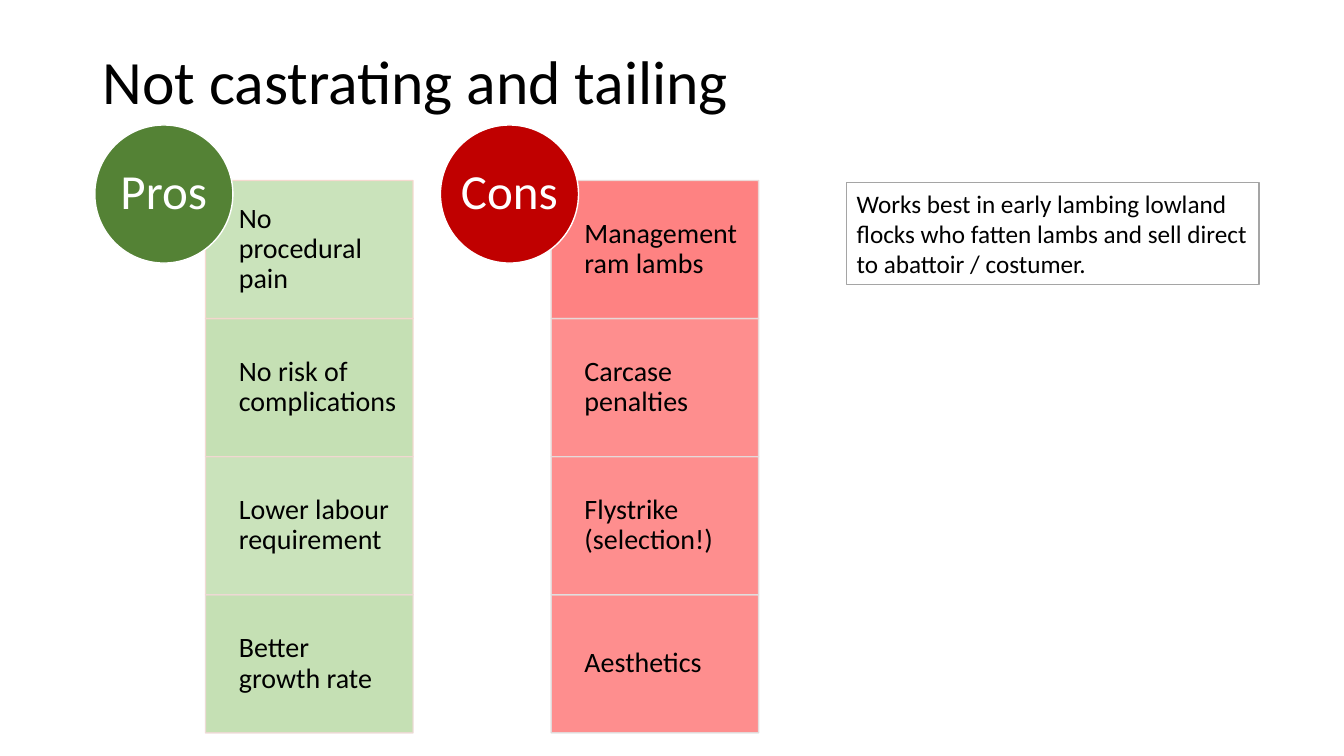
from lxml.etree import SubElement
from pptx import Presentation
from pptx.dml.color import RGBColor
from pptx.enum.shapes import MSO_SHAPE as Shape
from pptx.enum.text import MSO_ANCHOR as Anchor, PP_ALIGN as Align
from pptx.oxml.ns import qn
from pptx.util import Cm, Pt

CELL_W, CELL_H = 5.23, 3.48
TOP, LEFT, STEP = 4.55, 5.18, 8.71
DISC = 3.48
DISC_DX, DISC_TOP = 2.79, 3.15

# Heading, disc fill, cell fill, then (text, fill opacity, line colour) per cell
LISTS = [
    ("Pros", "548235", "C5E0B4", [
        ("No procedural pain", 90, "F8D7CE"),
        ("No risk of complications", 100, "F5D7D0"),
        ("Lower labour requirement", 90, "F2D8D3"),
        ("Better growth rate", 100, "EED9D5")]),
    ("Cons", "C00000", "FE8282", [
        ("Management ram lambs", 100, "EBDAD8"),
        ("Carcase penalties", 90, "E8DCDB"),
        ("Flystrike (selection!)", 90, "E4DEDE"),
        ("Aesthetics", 90, "E1E1E1")]),
]


def rgb(code):
    return RGBColor.from_string(code)


class Board:
    font = "Calibri"

    def __init__(self, deck):
        self.slide = deck.slides.add_slide(deck.slide_layouts[6])

    def label(self, shape, text, size, color="000000", align=Align.LEFT,
              pads=(0.25, 0.13, 0.25, 0.13), lead=0.9, wrap=True):
        """Set the text of a shape; pads are left, top, right, bottom in cm."""
        frame = shape.text_frame
        sides = ("margin_left", "margin_top", "margin_right", "margin_bottom")
        style = dict(zip(sides, map(Cm, pads)))
        style.update(word_wrap=wrap, vertical_anchor=Anchor.MIDDLE)
        for name, value in style.items():
            setattr(frame, name, value)
        para = frame.paragraphs[0]
        para.text, para.alignment, para.line_spacing = text, align, lead
        for name, value in {"name": self.font, "size": Pt(size)}.items():
            setattr(para.font, name, value)
        para.font.color.rgb = rgb(color)

    def fade(self, fill, percent):
        """Make a solid fill partly see-through."""
        for tint in fill.iter(qn("a:srgbClr")):
            SubElement(tint, qn("a:alpha"), val=str(percent * 1000))

    def shape(self, kind, box, fill, line, fill_op=100, line_op=100):
        item = self.slide.shapes.add_shape(kind, *map(Cm, box))
        item.shadow.inherit = False
        item.fill.solid()
        item.fill.fore_color.rgb = rgb(fill)
        item.line.color.rgb = rgb(line)
        item.line.width = Pt(1)
        props = item.element.spPr
        for part, percent in ((props.find(qn("a:solidFill")), fill_op),
                              (props.find(qn("a:ln")), line_op)):
            if percent < 100:
                self.fade(part, percent)
        return item

    def title(self, text, box):
        self.label(self.slide.shapes.add_textbox(*map(Cm, box)), text, 44)

    def cell(self, text, left, top, fill, opacity, line):
        item = self.shape(Shape.RECTANGLE, (left, top, CELL_W, CELL_H),
                          fill, line, opacity, 90)
        self.label(item, text, 20, pads=(0.84, 0.41, 0.41, 0.41))

    def disc(self, text, left, top, fill):
        item = self.shape(Shape.OVAL, (left, top, DISC, DISC), fill, "FFFFFF")
        self.label(item, text, 35, "FFFFFF", Align.CENTER, (0, 0, 0, 0),
                   wrap=False)

    def note(self, text, box):
        item = self.shape(Shape.RECTANGLE, box, "FFFFFF", "A5A5A5")
        self.label(item, text, 18, lead=1.0)


def main():
    deck = Presentation()
    deck.slide_width, deck.slide_height = Cm(33.87), Cm(19.05)
    board = Board(deck)
    board.title("Not castrating and tailing", (2.33, 0.28, 29.21, 3.68))
    for col, (head, dark, light, cells) in enumerate(LISTS):
        left = LEFT + col * STEP
        for row, (text, opacity, line) in enumerate(cells):
            board.cell(text, left, TOP + row * CELL_H, light, opacity, line)
        board.disc(head, left - DISC_DX, DISC_TOP, dark)
    board.note("Works best in early lambing lowland flocks who fatten lambs "
               "and sell direct to abattoir / costumer.",
               (21.34, 4.6, 10.39, 2.57))
    deck.save("out.pptx")


if __name__ == "__main__":
    main()
